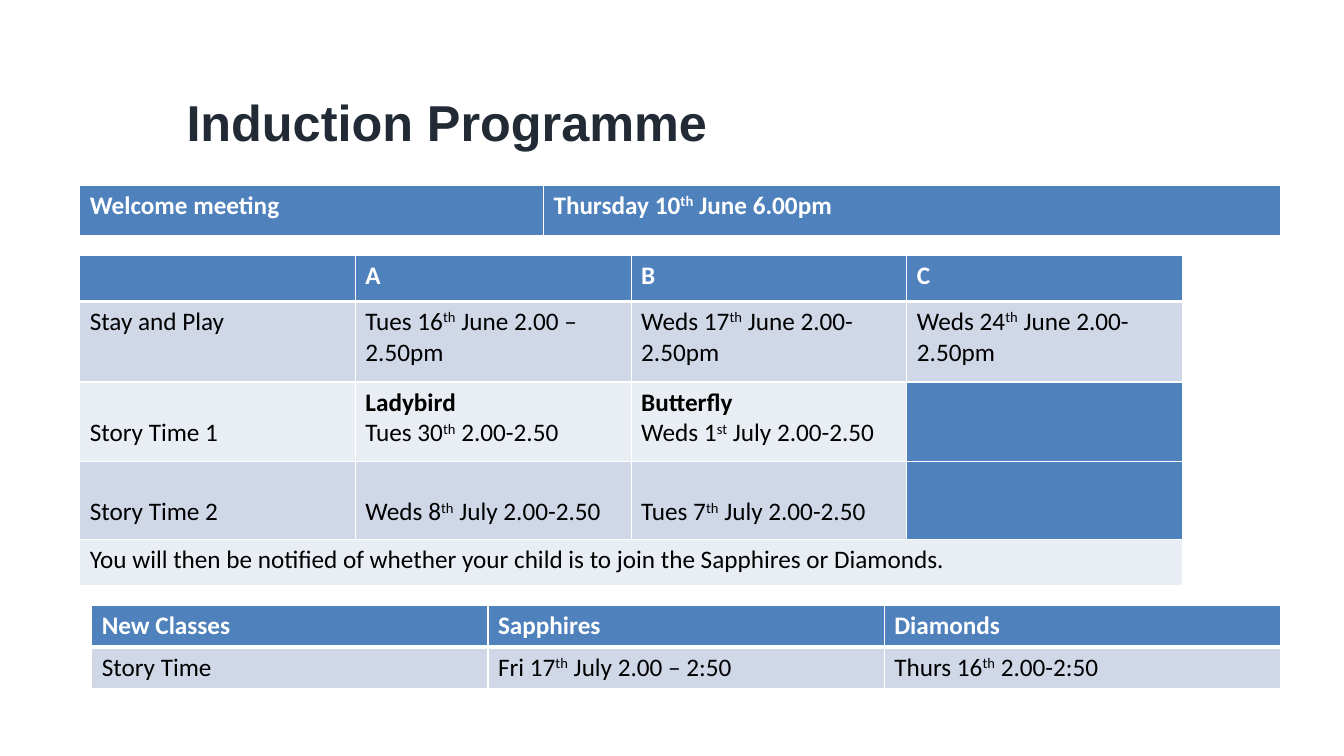
from lxml import etree
from pptx import Presentation
from pptx.dml.color import RGBColor
from pptx.enum.text import MSO_ANCHOR as Anchor, PP_ALIGN as Align
from pptx.oxml.ns import qn
from pptx.util import Inches, Pt

BLUE = RGBColor(0x4F, 0x81, 0xBD)
BAND_DARK = RGBColor(0xD0, 0xD8, 0xE8)
BAND_LIGHT = RGBColor(0xE9, 0xED, 0xF4)
WHITE = RGBColor(0xFF, 0xFF, 0xFF)
BLACK = RGBColor(0, 0, 0)
NAVY = RGBColor(0x21, 0x2A, 0x35)

# "^" encloses superscript; in two-line cells the first line is a bold class name or a gap.
VISITS = [
    ["", "A", "B", "C"],
    ["Stay and Play", "Tues 16^th^ June 2.00 – 2.50pm",
     "Weds 17^th^ June 2.00-2.50pm", "Weds 24^th^ June 2.00-2.50pm"],
    ["\nStory Time 1", "Ladybird\nTues 30^th^ 2.00-2.50",
     "Butterfly\nWeds 1^st^ July 2.00-2.50", ""],
    ["\nStory Time 2", "\nWeds 8^th^ July 2.00-2.50",
     "\nTues 7^th^ July 2.00-2.50", ""],
    ["You will then be notified of whether your child is to join the "
     "Sapphires or Diamonds.", "", "", ""],
]
WELCOME = [["Welcome meeting", "Thursday 10^th^ June 6.00pm"]]
CLASSES = [
    ["New Classes", "Sapphires", "Diamonds"],
    ["Story Time", "Fri 17^th^ July 2.00 – 2:50", "Thurs 16^th^ 2.00-2:50"],
]


class Deck:
    def __init__(self):
        self.prs = Presentation()
        self.prs.slide_width, self.prs.slide_height = Inches(13.33), Inches(7.5)
        self.s = self.prs.slides.add_slide(self.prs.slide_layouts[5])
        self.head = dict(name="Calibri", size=Pt(18), bold=True)
        self.body = dict(self.head, bold=False)

    def format(self, font, style, color):
        for key, value in style.items():
            setattr(font, key, value)
        font.color.rgb = color

    def title(self, text, x, y, w, h):
        sp = self.s.shapes.title
        sp.left, sp.top, sp.width, sp.height = map(Inches, (x, y, w, h))
        tf = sp.text_frame
        for side in ("left", "top", "right", "bottom"):
            setattr(tf, f"margin_{side}", 0)
        tf.vertical_anchor = Anchor.BOTTOM
        p = tf.paragraphs[0]
        p.alignment = Align.LEFT
        r = p.add_run()
        r.text = text
        self.format(r.font, dict(name="Arial", size=Pt(36), bold=True), NAVY)

    def borders(self, cell, bottom):
        tc_pr = cell._tc.get_or_add_tcPr()
        for i, (side, width) in enumerate(zip("LRTB", (1, 1, 1, bottom))):
            ln = etree.Element(qn(f"a:ln{side}"), w=str(Pt(width)))
            fill = etree.SubElement(ln, qn("a:solidFill"))
            etree.SubElement(fill, qn("a:srgbClr"), val=str(WHITE))
            tc_pr.insert(i, ln)

    def cell_text(self, cell, text, style, color):
        lines = text.split("\n")
        if len(lines) == 2 and not lines[0]:
            cell.margin_top = Inches(0.35)
            lines.pop(0)
        tf = cell.text_frame
        for i, line in enumerate(lines):
            p = tf.add_paragraph() if i else tf.paragraphs[0]
            self.format(p.font, style, color)
            is_name = i == 0 and len(lines) == 2
            for j, part in enumerate(line.split("^")):
                if not part:
                    continue
                r = p.add_run()
                r.text = part
                self.format(r.font, self.head if is_name else style, color)
                if j % 2:
                    r.font._element.set("baseline", "30000")

    def table(self, rows, x, y, widths, heights):
        """Add a table with a blue heading row and banded rows; empty cells are blue."""
        table = self.s.shapes.add_table(
            len(rows), len(widths), Inches(x), Inches(y),
            Inches(sum(widths)), Inches(sum(heights))).table
        for column, width in zip(table.columns, widths):
            column.width = Inches(width)
        for i, (row, height) in enumerate(zip(rows, heights)):
            table.rows[i].height = Inches(height)
            for j, text in enumerate(row):
                cell = table.cell(i, j)
                header = i == 0
                band = BAND_DARK if i % 2 else BAND_LIGHT
                cell.fill.solid()
                cell.fill.fore_color.rgb = BLUE if header or not text else band
                self.borders(cell, 3 if header else 1)
                self.cell_text(cell, text, self.head if header else self.body,
                               WHITE if header else BLACK)
        return table


def main():
    deck = Deck()
    deck.title("Induction Programme", 1.85, 0.87, 9.63, 0.63)
    visits = deck.table(VISITS, 0.79, 2.53, [10.94 / 4] * 4,
                        [0.46, 0.8, 0.79, 0.77, 0.46])
    visits.cell(4, 0).merge(visits.cell(4, 3))
    deck.table(WELCOME, 0.79, 1.84, [4.6, 7.31], [0.51])
    deck.table(CLASSES, 0.91, 6.01, [3.93] * 3, [0.41] * 2)
    deck.prs.save("out.pptx")


if __name__ == "__main__":
    main()
